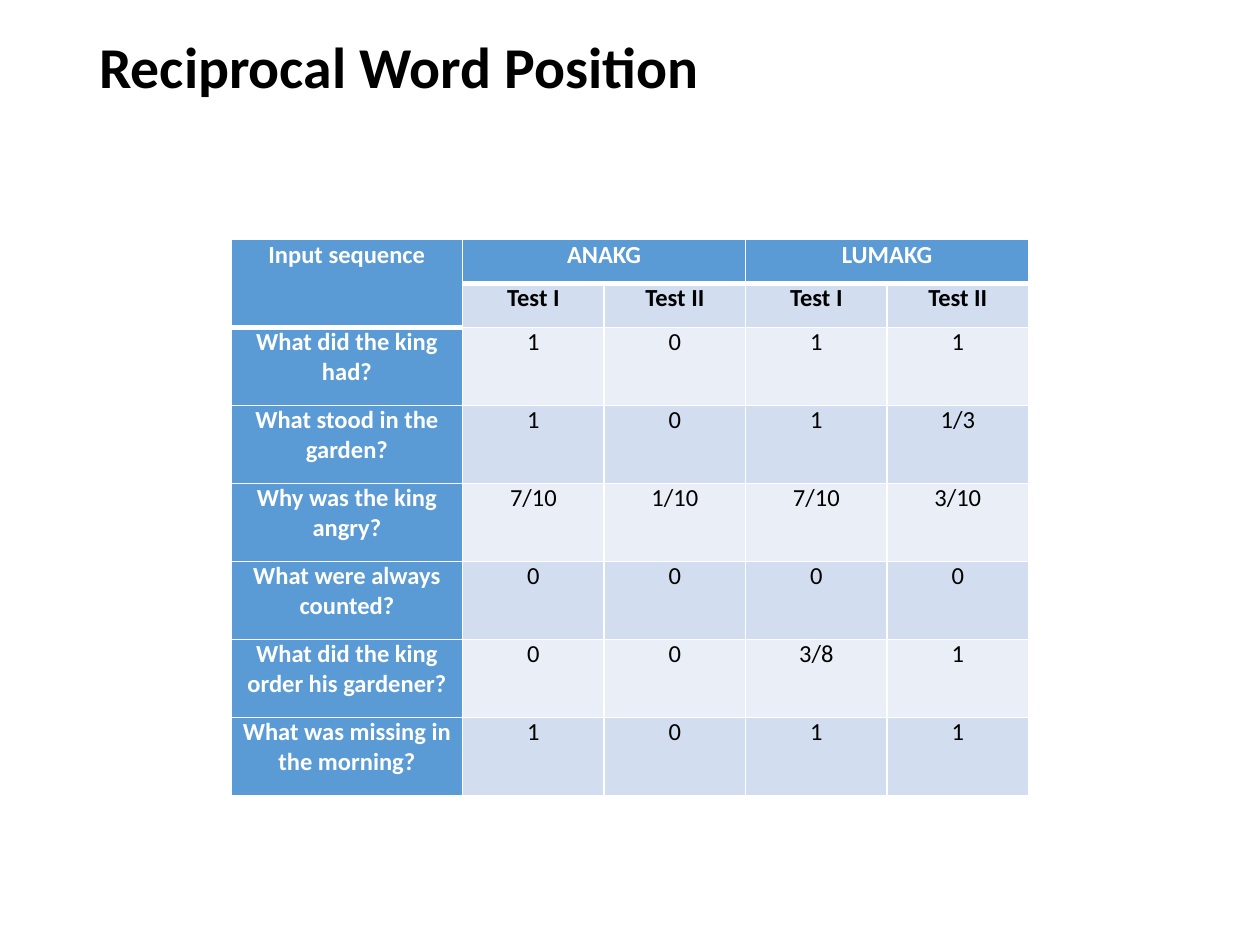
from lxml import etree
from pptx import Presentation
from pptx.dml.color import RGBColor
from pptx.enum import text
from pptx.oxml import ns
from pptx.util import Pt

FONT = "Calibri"
BLACK = RGBColor(0x00, 0x00, 0x00)
WHITE = RGBColor(0xFF, 0xFF, 0xFF)
BLUE = RGBColor(0x5B, 0x9B, 0xD5)
BANDS = [RGBColor(0xEA, 0xEF, 0xF7), RGBColor(0xD2, 0xDE, 0xEF)]

ROWS = [
    ["Input sequence", "ANAKG", "", "LUMAKG", ""],
    ["", "Test I", "Test II", "Test I", "Test II"],
    ["What did the king had?", "1", "0", "1", "1"],
    ["What stood in the garden?", "1", "0", "1", "1/3"],
    ["Why was the king angry?", "7/10", "1/10", "7/10", "3/10"],
    ["What were always counted?", "0", "0", "0", "0"],
    ["What did the king order his gardener?", "0", "0", "3/8", "1"],
    ["What was missing in the morning?", "1", "0", "1", "1"],
]
COL_WIDTHS = [132.3] + [80.85] * 4
ROW_HEIGHTS = [25.1] * 2 + [44.57] * 6


def add_run(p, words, size, color, bold):
    r = p.add_run()
    r.text = words
    r.font.name, r.font.size = FONT, Pt(size)
    r.font.bold, r.font.color.rgb = bold, color


def add_border(cell, side, width):
    ln = etree.SubElement(cell._tc.get_or_add_tcPr(), ns.qn(f"a:ln{side}"), w=str(Pt(width)))
    fill = etree.SubElement(ln, ns.qn("a:solidFill"))
    etree.SubElement(fill, ns.qn("a:srgbClr"), val=str(WHITE))


prs = Presentation()
prs.slide_width, prs.slide_height = Pt(720), Pt(540)
s = prs.slides.add_slide(prs.slide_layouts[5])

# Title
title = s.shapes.title
title.left, title.top, title.width, title.height = Pt(49.5), Pt(-12.2), Pt(621), Pt(104.4)
tf = title.text_frame
tf.vertical_anchor = text.MSO_ANCHOR.MIDDLE
p = tf.paragraphs[0]
p.alignment, p.line_spacing = text.PP_ALIGN.LEFT, 0.9
add_run(p, "Reciprocal Word Position", 33, BLACK, True)

# Table grid
table = s.shapes.add_table(len(ROWS), len(COL_WIDTHS), Pt(132.1), Pt(137),
                           Pt(sum(COL_WIDTHS)), Pt(sum(ROW_HEIGHTS))).table
for column, width in zip(table.columns, COL_WIDTHS):
    column.width = Pt(width)
for row, height in zip(table.rows, ROW_HEIGHTS):
    row.height = Pt(height)

# Merged headings
table.cell(0, 0).merge(table.cell(1, 0))
for col in (1, 3):
    table.cell(0, col).merge(table.cell(0, col + 1))

# Cells: heading row and first column in blue, the rest banded
for i, row in enumerate(ROWS):
    for j, words in enumerate(row):
        cell = table.cell(i, j)
        heading = i == 0 or j == 0
        cell.margin_left = cell.margin_right = Pt(5.4)
        cell.margin_top = cell.margin_bottom = Pt(0)

        # A thick rule runs below the headings
        last_heading_row = 1 if j == 0 else 0
        add_border(cell, "L", 1)
        add_border(cell, "R", 1)
        add_border(cell, "T", 3 if i == last_heading_row + 1 else 1)
        add_border(cell, "B", 3 if i <= last_heading_row else 1)
        cell.fill.solid()
        cell.fill.fore_color.rgb = BLUE if heading else BANDS[i % 2]

        if words:
            p = cell.text_frame.paragraphs[0]
            p.alignment = text.PP_ALIGN.CENTER
            add_run(p, words, 14, WHITE if heading else BLACK, heading or i == 1)

prs.save("out.pptx")
